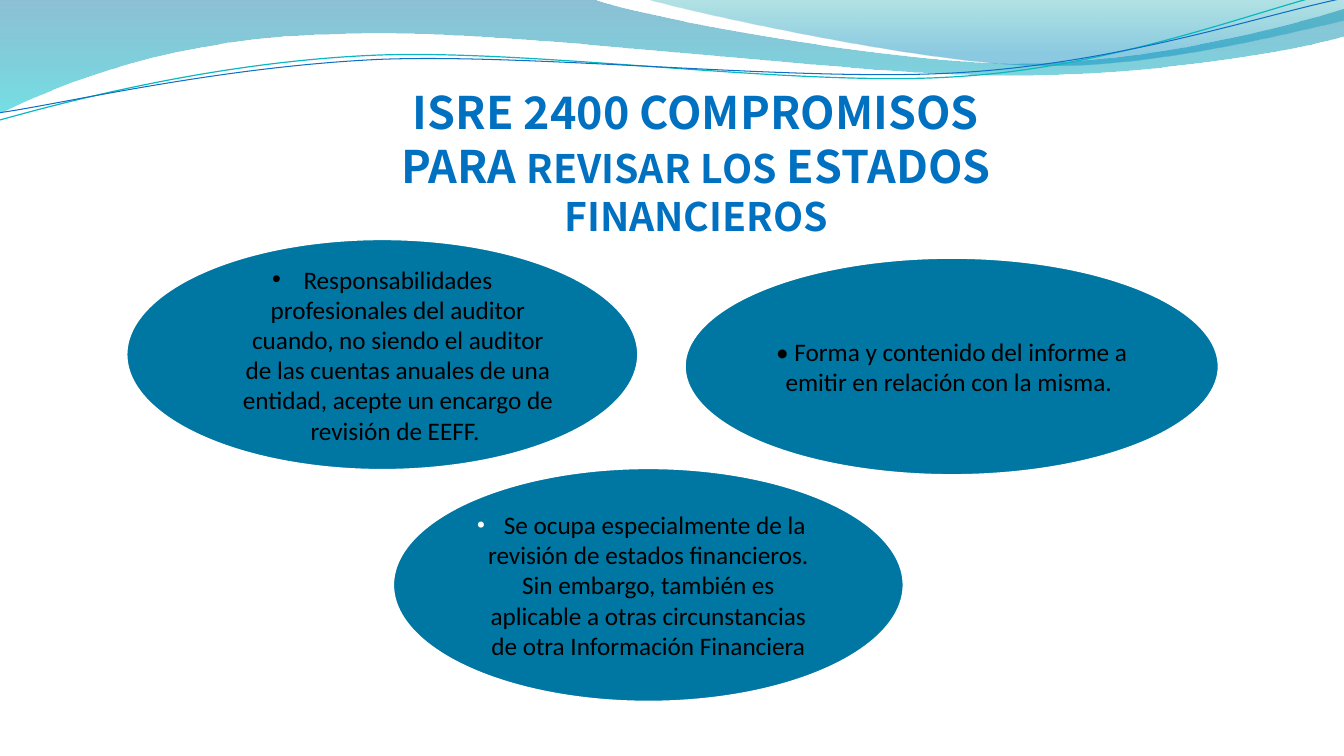
from dataclasses import dataclass

from lxml import etree
from pptx import Presentation
from pptx import util as u
from pptx.dml.color import RGBColor
from pptx.enum import shapes, text
from pptx.oxml.ns import qn


@dataclass(frozen=True)
class Theme:
    title_font: str = "Noto Sans CJK KR"
    body_font: str = "Calibri"
    title_large: int = 32
    title_small: int = 28
    body_size: int = 18
    bullet_size: int = 16
    title: str = "0070C0"
    ellipse: str = "0076A3"
    white: str = "FFFFFF"
    black: str = "000000"
    # Gradient stops: position, colour, opacity in percent
    wide_wave: tuple = ((0, "0074A1", 45), (1, "00C6CF", 55))
    right_wave: tuple = ((0, "00A1A9", 30), (0.8, "008BBF", 45))
    teal_line: str = "0AB8BF"
    blue_line: str = "0F6FC6"


THEME = Theme()
LINE_ROTATION = 357.3

# Wave outlines in centimetres: one point is a straight side, three are a Bézier curve
WIDE_WAVE = [
    [(0, 0)], [(14.91, -0.03)],
    [(16.1, 0.43), (22.48, 1.6), (25.68, 1.6)],
    [(28.91, 1.6), (32.46, 0.66), (33.86, 0.23)],
    [(33.91, 0.91)],
    [(33.3, 1.12), (29.46, 1.93), (25.25, 1.9)],
    [(21.06, 1.9), (12.93, 0.71), (8.71, 0.86)],
    [(4.37, 0.91), (1.55, 2.11), (-0.03, 2.87)],
]
RIGHT_WAVE = [
    [(16.23, -0.03)],
    [(17.25, 0.28), (23.09, 1.57), (26.04, 1.65)],
    [(28.98, 1.75), (32.56, 0.81), (33.86, 0.53)],
    [(33.86, 0)],
]
# Lines before their rotation
TEAL_LINE = [
    [(-0.08, 2.23)],
    [(1.59, 1.85), (5.37, 1.03), (9.38, 1.04)],
    [(13.4, 1.05), (20.03, 2.36), (24.1, 2.27)],
    [(28.17, 2.21), (31.84, 0.91), (33.87, 0.55)],
]
BLUE_LINE = [
    [(-0.05, 2.04)],
    [(1.56, 1.89), (5.54, 1.14), (9.61, 1.15)],
    [(13.65, 1.19), (20.19, 2.24), (24.23, 2.17)],
    [(28.31, 2.11), (31.92, 1.06), (33.94, 0.75)],
]


def rgb(colour):
    return RGBColor.from_string(colour)


def format_run(run, font, size, colour, bold=False):
    run.font.name = font
    run.font.size = u.Pt(size)
    run.font.color.rgb = rgb(colour)
    run.font.bold = bold


def add_outline(slide, left, top, segments, close):
    """Draw the corners as a freeform, then bend the curved sides."""
    placed = [[(u.Cm(left + x), u.Cm(top + y)) for x, y in segment] for segment in segments]
    corners = [segment[-1] for segment in placed]
    builder = slide.shapes.build_freeform(*corners[0])
    builder.add_line_segments(corners[1:], close=close)
    shape = builder.convert_to_shape()
    shape.shadow.inherit = False
    sides = list(shape.element.iter(qn("a:lnTo")))
    for side, segment in zip(sides, placed[1:]):
        if len(segment) == 3:
            side.tag = qn("a:cubicBezTo")
            side.clear()
            for x, y in segment:
                point = etree.SubElement(side, qn("a:pt"))
                point.set("x", str(x - shape.left))
                point.set("y", str(y - shape.top))
    return shape


def add_waves(slide, left, top):
    # Translucent bands
    for segments, stops in ((WIDE_WAVE, THEME.wide_wave), (RIGHT_WAVE, THEME.right_wave)):
        band = add_outline(slide, left, top, segments, True)
        band.line.fill.background()
        band.fill.gradient()
        band.fill.gradient_angle = 270
        for stop, (position, colour, opacity) in zip(band.fill.gradient_stops, stops):
            stop.position = position
            stop.color.rgb = rgb(colour)
        for tag, (position, colour, opacity) in zip(band.element.iter(qn("a:srgbClr")), stops):
            etree.SubElement(tag, qn("a:alpha")).set("val", str(opacity * 1000))
    # Thin lines
    for segments, colour, width in ((TEAL_LINE, THEME.teal_line, 0.85),
                                    (BLUE_LINE, THEME.blue_line, 0.75)):
        line = add_outline(slide, left, top, segments, False)
        line.rotation = LINE_ROTATION
        line.fill.background()
        line.line.color.rgb = rgb(colour)
        line.line.width = u.Pt(width)


def add_title(slide, left, top, width, height, pieces):
    box = slide.shapes.add_textbox(u.Cm(left), u.Cm(top), u.Cm(width), u.Cm(height))
    box.text_frame.word_wrap = True
    paragraph = box.text_frame.paragraphs[0]
    paragraph.alignment = text.PP_ALIGN.CENTER
    for words, size in pieces:
        run = paragraph.add_run()
        run.text = words
        format_run(run, THEME.title_font, size, THEME.title, bold=True)


def add_bullet(paragraph, indent):
    properties = paragraph._p.get_or_add_pPr()
    if indent:
        properties.set("marL", str(u.Cm(indent)))
        properties.set("indent", str(-u.Cm(indent)))
    etree.SubElement(properties, qn("a:buFont")).set("typeface", "Arial")
    etree.SubElement(properties, qn("a:buChar")).set("char", "•")


def add_ellipse(slide, left, top, width, height, words, bullet=False, indent=0, lead=""):
    shape = slide.shapes.add_shape(shapes.MSO_SHAPE.OVAL, u.Cm(left), u.Cm(top),
                                   u.Cm(width), u.Cm(height))
    shape.shadow.inherit = False
    shape.fill.solid()
    shape.fill.fore_color.rgb = rgb(THEME.ellipse)
    shape.line.color.rgb = rgb(THEME.white)
    shape.line.width = u.Pt(3)
    frame = shape.text_frame
    frame.word_wrap = True
    frame.vertical_anchor = text.MSO_ANCHOR.MIDDLE
    paragraph = frame.paragraphs[0]
    paragraph.alignment = text.PP_ALIGN.CENTER
    if bullet:
        add_bullet(paragraph, indent)
    # A white lead-in run gives its colour and size to the bullet
    if lead:
        run = paragraph.add_run()
        run.text = lead
        format_run(run, THEME.body_font, THEME.bullet_size, THEME.white)
    run = paragraph.add_run()
    run.text = words
    format_run(run, THEME.body_font, THEME.body_size, THEME.black)


def main():
    presentation = Presentation()
    presentation.slide_width = u.Cm(33.87)
    presentation.slide_height = u.Cm(19.05)
    slide = presentation.slides.add_slide(presentation.slide_layouts[6])

    add_waves(slide, 0, 0)
    large, small = THEME.title_large, THEME.title_small
    add_title(slide, 9.07, 2.02, 16.94, 4.19, [
        ("ISRE 2400 COMPROMISOS PARA ", large), ("REVISAR", small), (" ", large),
        ("LOS", small), (" ESTADOS ", large), ("FINANCIEROS", small)])

    # Three topics
    add_ellipse(slide, 9.88, 11.77, 12.92, 5.94,
                "Se ocupa especialmente de la revisión de estados financieros. Sin embargo, "
                "también es aplicable a otras circunstancias de otra Información Financiera",
                bullet=True, lead=" ")
    add_ellipse(slide, 17.23, 6.47, 13.51, 5.53,
                "• Forma y contenido del informe a emitir en relación con la misma. ")
    add_ellipse(slide, 3.16, 6.0, 12.95, 5.87,
                "Responsabilidades profesionales del auditor cuando, no siendo el auditor de las "
                "cuentas anuales de una entidad, acepte un encargo de revisión de EEFF. ",
                bullet=True, indent=0.79)

    presentation.save("out.pptx")


if __name__ == "__main__":
    main()
